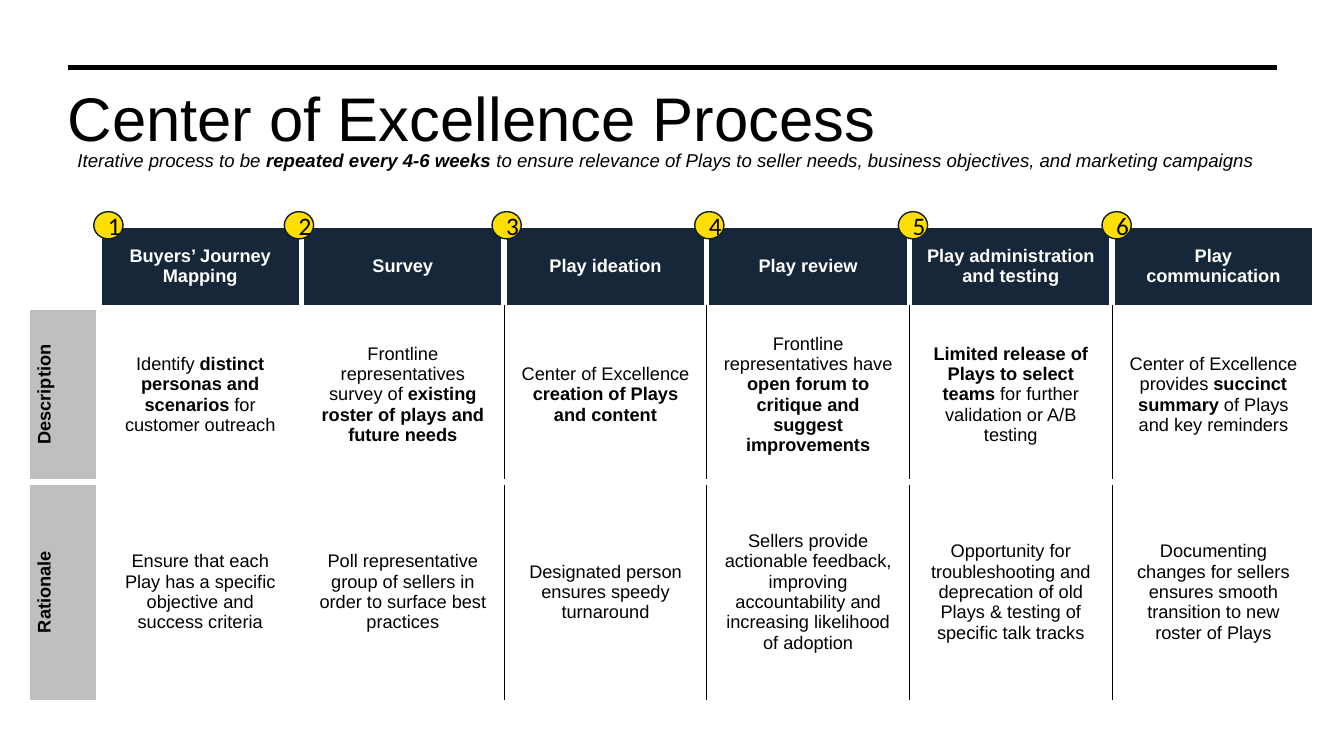
from collections import namedtuple
from dataclasses import dataclass

from lxml.etree import SubElement
from pptx import Presentation
from pptx.dml.color import RGBColor
from pptx.enum.shapes import MSO_CONNECTOR, MSO_SHAPE
from pptx.enum.text import MSO_ANCHOR, PP_ALIGN
from pptx.oxml.ns import qn
from pptx.util import Inches, Pt

Box = namedtuple("Box", "left top width height")


@dataclass(frozen=True)
class Theme:
    font: str = "Arial"
    badge_font: str = "Calibri"
    ink: str = "000000"
    paper: str = "FFFFFF"
    navy: str = "162739"
    grey: str = "BFBFBF"
    yellow: str = "FFDE00"
    badge_line: str = "101D2A"
    title_size: float = 44
    subtitle_size: float = 13.3
    table_size: float = 13
    badge_size: float = 18
    rule_width: float = 3.75
    gap_width: float = 4.5
    divider_width: float = 0.75


THEME = Theme()
Step = namedtuple("Step", "heading description rationale badge_offset")

STEPS = [
    Step("Buyers’ Journey Mapping",
         "Identify **distinct personas and scenarios **for customer outreach",
         "Ensure that each Play has a specific objective and success criteria", -0.05),
    Step("Survey",
         "Frontline representatives survey of **existing roster of plays and future needs**",
         "Poll representative group of sellers in order to surface best practices", -0.17),
    Step("Play ideation",
         "Center of Excellence **creation of Plays and content**",
         "Designated person ensures speedy turnaround", -0.12),
    Step("Play review",
         "Frontline representatives have **open forum to critique and suggest improvements**",
         "Sellers provide actionable feedback, improving accountability and increasing "
         "likelihood of adoption", -0.12),
    Step("Play administration and testing",
         "**Limited release of Plays to select teams **for further validation or A/B testing",
         "Opportunity for troubleshooting and deprecation of old Plays & testing of "
         "specific talk tracks", -0.11),
    Step("Play communication",
         "Center of Excellence provides **succinct summary **of Plays and key reminders",
         "Documenting changes for sellers ensures smooth transition to new roster of Plays",
         -0.1),
]
LABEL_WIDTH, STEP_WIDTH = 0.71, 2.01
ROW_HEIGHTS = [0.82, 1.73, 2.19]


def color(value):
    return RGBColor.from_string(value)


def inches(box):
    return [Inches(length) for length in box]


def write(frame, text, size, ink=THEME.ink, font=THEME.font, italic=False, align=None):
    para = frame.paragraphs[0]
    para.alignment = align
    for index, part in enumerate(text.split("**")):
        if part:
            span = para.add_run()
            span.text = part
            span.font.name = font
            span.font.size = Pt(size)
            span.font.bold = index % 2 == 1
            span.font.italic = italic
            span.font.color.rgb = color(ink)
    return para


def set_border(cell, side, ink, width):
    properties = cell._tc.get_or_add_tcPr()
    line = SubElement(properties, qn(f"a:ln{side}"), w=str(Pt(width)))
    fill = SubElement(line, qn("a:solidFill"))
    SubElement(fill, qn("a:srgbClr"), val=ink)


def draw_header(page, box):
    rule = page.shapes.add_connector(
        MSO_CONNECTOR.STRAIGHT, *inches((box.left, box.top, box.left + box.width, box.top)))
    rule.line.color.rgb = color(THEME.ink)
    rule.line.width = Pt(THEME.rule_width)
    SubElement(rule._element.spPr, qn("a:effectLst"))

    title = page.shapes.add_textbox(*inches((box.left, box.top + 0.2, 10.55, 0.72))).text_frame
    title.word_wrap = True
    title.vertical_anchor = MSO_ANCHOR.MIDDLE
    title.margin_left = title.margin_right = title.margin_top = title.margin_bottom = 0
    write(title, "Center of Excellence Process", THEME.title_size).line_spacing = 0.8

    subtitle = page.shapes.add_textbox(
        *inches((box.left, box.top + 0.76, box.width, 0.33))).text_frame
    subtitle.word_wrap = True
    write(subtitle, "Iterative process to be **repeated every 4-6 weeks** to ensure relevance of "
          "Plays to seller needs, business objectives, and marketing campaigns",
          THEME.subtitle_size, italic=True)


def format_cell(cell, text, row, column):
    heading, label = row == 0, column == 0
    cell.margin_left = cell.margin_right = Inches(0.13)
    cell.margin_top = cell.margin_bottom = Inches(0.07)
    cell.vertical_anchor = MSO_ANCHOR.MIDDLE
    divided = {"L": column > 2, "R": 1 < column < len(STEPS)}
    for side in "LRTB":
        if not heading and divided.get(side):
            set_border(cell, side, THEME.ink, THEME.divider_width)
        else:
            set_border(cell, side, THEME.paper, THEME.gap_width)
    fill = THEME.navy if heading else THEME.grey
    if heading != label:
        cell.fill.solid()
        cell.fill.fore_color.rgb = color(fill)
        text = f"**{text}**"
    else:
        cell.fill.background()
    if label and not heading:
        cell._tc.get_or_add_tcPr().set("vert", "vert270")
    write(cell.text_frame, text, THEME.table_size,
          ink=THEME.paper if heading else THEME.ink, align=PP_ALIGN.CENTER)


def draw_process(page, box):
    rows = [
        ["", *(step.heading for step in STEPS)],
        ["Description", *(step.description for step in STEPS)],
        ["Rationale", *(step.rationale for step in STEPS)],
    ]
    table = page.shapes.add_table(len(rows), len(rows[0]), *inches(box)).table
    table.first_row = table.horz_banding = False
    for index, column in enumerate(table.columns):
        column.width = Inches(STEP_WIDTH if index else LABEL_WIDTH)
    for index, texts in enumerate(rows):
        table.rows[index].height = Inches(ROW_HEIGHTS[index])
        for column, text in enumerate(texts):
            format_cell(table.cell(index, column), text, index, column)


def draw_badges(page, box):
    for index, step in enumerate(STEPS):
        left = box.left + LABEL_WIDTH + index * STEP_WIDTH + step.badge_offset
        badge = page.shapes.add_shape(
            MSO_SHAPE.OVAL, *inches((left, box.top - 0.13, 0.29, 0.27)))
        badge.shadow.inherit = False
        badge.fill.solid()
        badge.fill.fore_color.rgb = color(THEME.yellow)
        badge.line.color.rgb = color(THEME.badge_line)
        badge.line.width = Pt(1)
        badge.text_frame.vertical_anchor = MSO_ANCHOR.MIDDLE
        write(badge.text_frame, str(index + 1), THEME.badge_size,
              font=THEME.badge_font, align=PP_ALIGN.CENTER)


def main():
    deck = Presentation()
    deck.slide_width, deck.slide_height = Inches(13.33), Inches(7.5)
    page = deck.slides.add_slide(deck.slide_layouts[6])
    process = Box(0.27, 2.23, LABEL_WIDTH + len(STEPS) * STEP_WIDTH, sum(ROW_HEIGHTS))
    draw_header(page, Box(0.67, 0.67, 12, 1.09))
    draw_process(page, process)
    draw_badges(page, process)
    deck.save("out.pptx")


if __name__ == "__main__":
    main()
